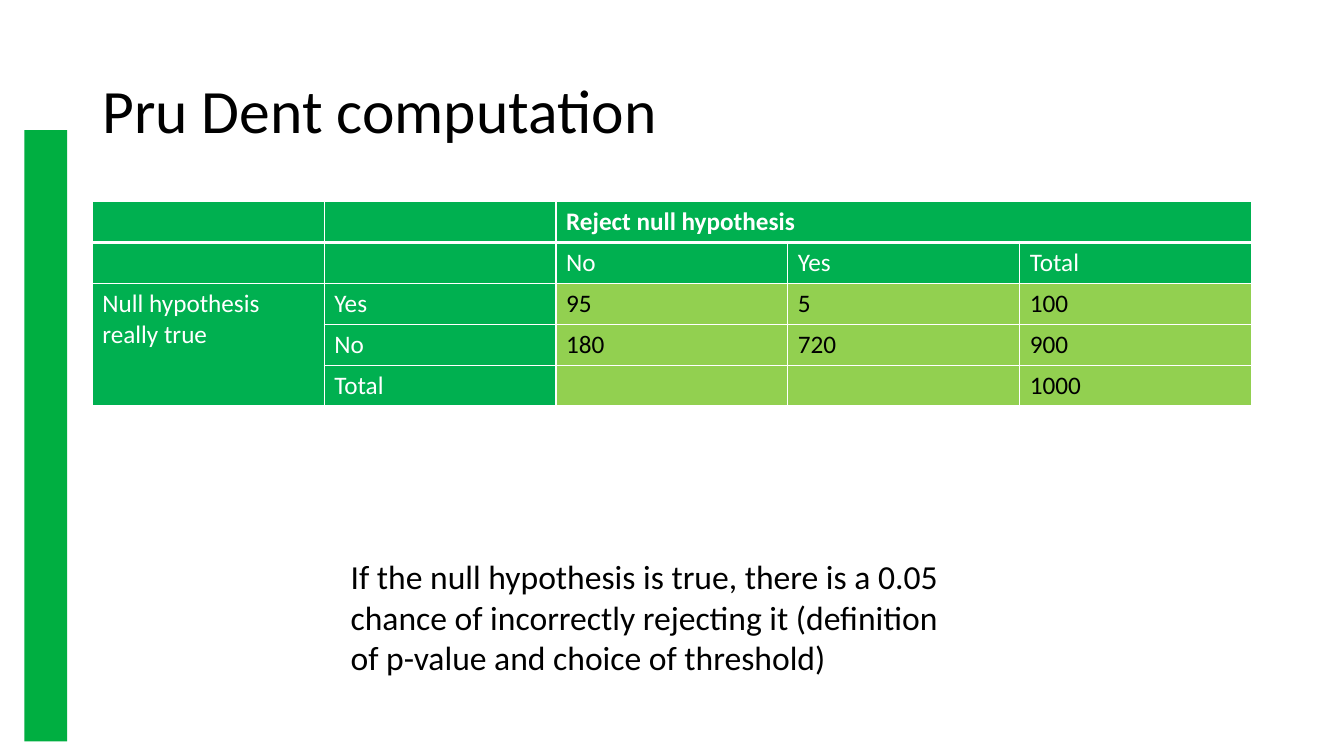
from dataclasses import dataclass

import pptx
import pptx.dml.color
import pptx.enum.shapes
import pptx.enum.text
import pptx.oxml
import pptx.oxml.ns
import pptx.util
from pptx.util import Pt


def rgb(code):
    return pptx.dml.color.RGBColor.from_string(code)


@dataclass(frozen=True)
class Theme:
    font: str = "Calibri"
    black: str = "000000"
    white: str = "FFFFFF"
    bar: str = "00AF41"
    header: str = "00B050"
    body: str = "92D050"
    title_size: int = 44
    table_size: int = 18
    note_size: int = 24


THEME = Theme()

ROWS = [
    ["", "", "Reject null hypothesis", "", ""],
    ["", "", "No", "Yes", "Total"],
    ["Null hypothesis really true", "Yes", "95", "5", "100"],
    ["", "No", "180", "720", "900"],
    ["", "Total", "", "", "1000"],
]
HEADER_ROWS = HEADER_COLUMNS = 2


def style_para(para, size, color, bold=False):
    para.font.name = THEME.font
    para.font.size = Pt(size)
    para.font.color.rgb = rgb(color)
    para.font.bold = bold


def add_rectangle(page, box, color):
    shape = page.shapes.add_shape(
        pptx.enum.shapes.MSO_SHAPE.RECTANGLE, *map(Pt, box))
    shape.shadow.inherit = False
    shape.fill.solid()
    shape.fill.fore_color.rgb = rgb(color)
    shape.line.fill.background()
    return shape


def add_title(page, box, text):
    title = page.shapes.title
    title.left, title.top, title.width, title.height = map(Pt, box)
    frame = title.text_frame
    frame.text = text
    frame.word_wrap = True
    frame.vertical_anchor = pptx.enum.text.MSO_ANCHOR.MIDDLE
    para = frame.paragraphs[0]
    para.alignment = pptx.enum.text.PP_ALIGN.LEFT
    para.line_spacing = 0.9
    style_para(para, THEME.title_size, THEME.black)


def set_borders(cell, widths):
    """Draw white cell borders; widths maps L, R, T and B to points."""
    properties = cell._tc.get_or_add_tcPr()
    for side, width in widths.items():
        properties.append(pptx.oxml.parse_xml(
            f'<a:ln{side} {pptx.oxml.ns.nsdecls("a")} w="{Pt(width)}">'
            f'<a:solidFill><a:srgbClr val="{THEME.white}"/></a:solidFill>'
            f'</a:ln{side}>'))


def add_outcome_table(page, box):
    left, top, width, height = box
    table = page.shapes.add_table(
        len(ROWS), len(ROWS[0]), *map(Pt, box)).table
    for column in table.columns:
        column.width = Pt(width / len(ROWS[0]))
    for row in table.rows:
        row.height = Pt(height / len(ROWS))
    for r, texts in enumerate(ROWS):
        for c, text in enumerate(texts):
            cell = table.cell(r, c)
            is_header = r < HEADER_ROWS or c < HEADER_COLUMNS
            set_borders(cell, {"L": 1, "R": 1, "T": 3 if r == 1 else 1,
                               "B": 3 if r == 0 else 1})
            cell.fill.solid()
            cell.fill.fore_color.rgb = rgb(
                THEME.header if is_header else THEME.body)
            cell.text = text
            style_para(cell.text_frame.paragraphs[0], THEME.table_size,
                       THEME.white if is_header else THEME.black, r == 0)
    table.cell(0, 2).merge(table.cell(0, 4))
    table.cell(2, 0).merge(table.cell(4, 0))


def add_note(page, box, text):
    frame = add_rectangle(page, box, THEME.white).text_frame
    frame.word_wrap = True
    frame.auto_size = pptx.enum.text.MSO_AUTO_SIZE.SHAPE_TO_FIT_TEXT
    frame.vertical_anchor = pptx.enum.text.MSO_ANCHOR.TOP
    frame.text = text
    para = frame.paragraphs[0]
    para.alignment = pptx.enum.text.PP_ALIGN.LEFT
    style_para(para, THEME.note_size, THEME.black)


def main():
    deck = pptx.Presentation()
    deck.slide_width, deck.slide_height = Pt(960), Pt(540)
    page = deck.slides.add_slide(deck.slide_layouts.get_by_name("Title Only"))
    add_rectangle(page, (17.5, 93, 30.5, 436.5), THEME.bar)
    add_title(page, (66, 28.8, 828, 104.4), "Pru Dent computation")
    add_outcome_table(page, (66, 144, 828, 146))
    add_note(page, (243.4, 393.8, 451.4, 94.5),
             "If the null hypothesis is true, there is a 0.05 chance of "
             "incorrectly rejecting it (definition of p-value and choice "
             "of threshold)")
    deck.save("out.pptx")


if __name__ == "__main__":
    main()
